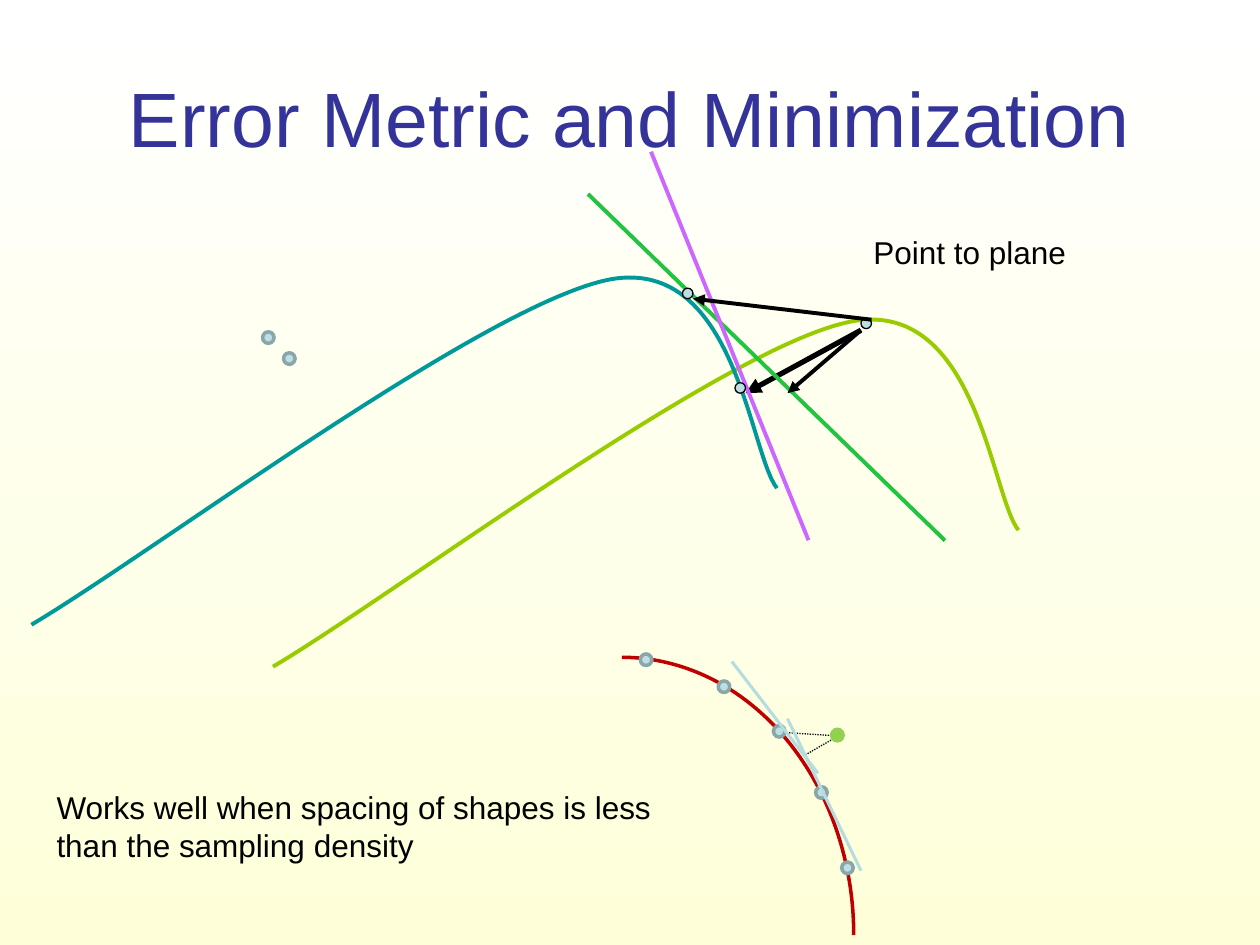
import pptx
import pptx.dml.color
import pptx.enum.dml
import pptx.enum.shapes
import pptx.enum.text
import pptx.oxml
import pptx.oxml.ns
import pptx.util

rgb = pptx.dml.color.RGBColor.from_string
qn = pptx.oxml.ns.qn
NAMESPACE = pptx.oxml.ns.nsdecls("a")
SHAPES = pptx.enum.shapes.MSO_SHAPE
ALIGN = pptx.enum.text.PP_ALIGN
ANCHOR = pptx.enum.text.MSO_ANCHOR
AUTO_SIZE = pptx.enum.text.MSO_AUTO_SIZE

presentation = pptx.Presentation()
presentation.slide_width = pptx.util.Inches(10)
presentation.slide_height = pptx.util.Inches(7.5)
slide = presentation.slides.add_slide(presentation.slide_layouts[6])

# Grid of 120 columns by 90 rows; all places below are in its square cells
CELL = presentation.slide_width // 120


def add_text(text, left, top, width, height, size=18, color="000000",
             align=ALIGN.LEFT, anchor=ANCHOR.TOP, wrap=True, fit=AUTO_SIZE.SHAPE_TO_FIT_TEXT):
    box = slide.shapes.add_textbox(*(int(v * CELL) for v in (left, top, width, height)))
    frame = box.text_frame
    frame.word_wrap = wrap
    frame.auto_size = fit
    frame.vertical_anchor = anchor
    frame.text = text
    for paragraph in frame.paragraphs:
        paragraph.alignment = align
        paragraph.font.size = pptx.util.Pt(size)
        paragraph.font.name = "Arial"
        paragraph.font.color.rgb = rgb(color)


def paint(shape, color, width, fill=None, dash=None, arrow=False):
    shape.line.color.rgb = rgb(color)
    shape.line.width = pptx.util.Pt(width)
    if dash:
        shape.line.dash_style = dash
    if arrow:
        shape.line._get_or_add_ln().append(
            pptx.oxml.parse_xml(f'<a:tailEnd {NAMESPACE} type="triangle"/>'))
    if fill:
        shape.fill.solid()
        shape.fill.fore_color.rgb = rgb(fill)
    elif hasattr(shape, "fill"):
        shape.fill.background()
    shape._element.spPr.append(pptx.oxml.parse_xml(f"<a:effectLst {NAMESPACE}/>"))


# Background gradient, top to bottom
background = slide.background.fill
background.gradient()
background.gradient_angle = 270
for stop, color in zip(background.gradient_stops, ("FFFFFF", "FEFFD9")):
    stop.color.rgb = rgb(color)

# Text
add_text("Error Metric and Minimization", 6, 3.6, 108, 15, size=44, color="333399",
         align=ALIGN.CENTER, anchor=ANCHOR.MIDDLE, fit=AUTO_SIZE.NONE)
add_text("Point to plane", 82, 21.6, 38, 6)
add_text("Works well when spacing of shapes is less\nthan the sampling density",
         4.2, 74.46, 59.6, 8.5, wrap=False)

# One curve drawn twice: a start, then two cubics of three points each
curve = [(74, 46.5), (71.4, 43.2), (70.1, 24.5), (58.2, 26.6),
         (46.3, 28.8), (14.5, 52.7), (3, 59.5)]
for shift_x, shift_y, color in ((23, 4, "99CC00"), (0, 0, "009999")):
    points = [(int((x + shift_x) * CELL), int((y + shift_y) * CELL)) for x, y in curve]
    builder = slide.shapes.build_freeform(*points[0])
    builder.add_line_segments(points[1:], close=False)
    shape = builder.convert_to_shape()
    # Turn each three straight segments into one cubic segment
    outline = next(shape._element.iter(qn("a:path")))
    straight = outline.findall(qn("a:lnTo"))
    for start in range(0, len(straight), 3):
        cubic = pptx.oxml.parse_xml(f"<a:cubicBezTo {NAMESPACE}/>")
        for segment in straight[start:start + 3]:
            cubic.append(segment[0])
            outline.remove(segment)
        outline.append(cubic)
    paint(shape, color, 2.25)

# Styles of lines and dots
dotted = dict(color="000000", width=0.75, dash=pptx.enum.dml.MSO_LINE.ROUND_DOT)
arrow = dict(color="000000", width=2.25, arrow=True)
nearest_arrow = dict(arrow, width=3)
first_plane = dict(color="21C340", width=2.25)
second_plane = dict(color="CC66FF", width=2.25)
tangent = dict(color="B6DCDF", width=1.75)
match = dict(color="000000", width=0.75, fill="BBE0E3")
sample = dict(color="8AA6A8", width=2, fill="BBE0E3")
query = dict(color="92D050", width=2, fill="92D050")

# Sampled arc at the bottom
arc = slide.shapes.add_shape(
    SHAPES.ARC, *(int(v * CELL) for v in (37.15, 62.6, 44.16, 52.9)))
paint(arc, "C00000", 2)

# Back to front: two points make a line; left, top and size make a dot
samples = [(60.98, 62.28), (68.4, 64.85), (73.66, 69.1), (77.68, 74.93), (80.16, 82.1),
           (25, 31.6), (27, 33.6)]
parts = [
    ((79.2, 70.05, 73.7, 69.7), dotted),
    ((76.7, 71.9, 79.3, 70.4), dotted),
    ((82, 30.3, 1), match),
    ((82, 31.45, 71, 37.45), nearest_arrow),
    ((56, 18.48, 90, 51.48), first_plane),
    ((62, 14.45, 77, 51.45), second_plane),
    ((82, 31.45, 75, 37.45), arrow),
    ((70, 36.45, 1), match),
    ((65, 27.45, 1), match),
    ((83, 30.45, 66, 28.45), arrow),
    *(((left, top, 1.1), sample) for left, top in samples),
    ((79.2, 69.46, 1.1), query),
    ((69.7, 63, 77.9, 73.65), tangent),
    ((75, 68.45, 82, 82.92), tangent),
]
for place, style in parts:
    lengths = [int(v * CELL) for v in place]
    if len(lengths) == 4:
        shape = slide.shapes.add_connector(
            pptx.enum.shapes.MSO_CONNECTOR.STRAIGHT, *lengths)
    else:
        left, top, size = lengths
        shape = slide.shapes.add_shape(SHAPES.OVAL, left, top, size, size)
    paint(shape, **style)

presentation.save("out.pptx")
